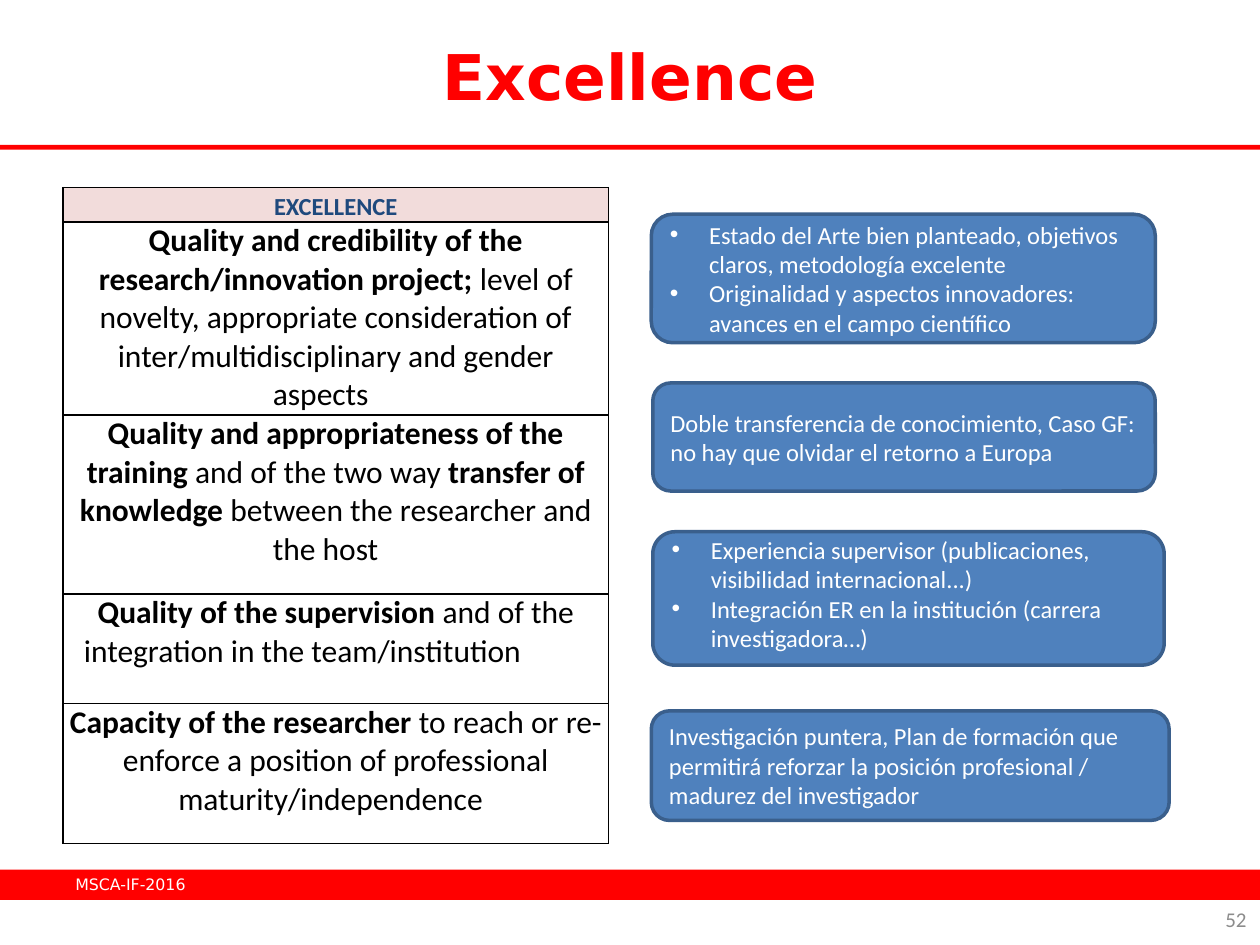
from lxml.etree import SubElement
from pptx import Presentation
from pptx.dml.color import RGBColor
from pptx.enum.shapes import MSO_SHAPE
from pptx.enum.text import MSO_ANCHOR, PP_ALIGN
from pptx.oxml.ns import qn
from pptx.util import Cm, Pt

RED = RGBColor(0xFF, 0x00, 0x00)
WHITE = RGBColor(0xFF, 0xFF, 0xFF)
BLACK = RGBColor(0x00, 0x00, 0x00)
NAVY = RGBColor(0x1F, 0x49, 0x7D)
PINK = RGBColor(0xF2, 0xDC, 0xDB)
BLUE = RGBColor(0x4F, 0x81, 0xBD)
DARK_BLUE = RGBColor(0x3A, 0x5F, 0x8C)
GREY = RGBColor(0x8C, 0x8C, 0x8C)
BODY, HEAD = "Calibri", "DejaVu Sans"

# Content: criteria as (row height, [(text, bold), ...])
TABLE_HEAD = (0.69, "EXCELLENCE")
CRITERIA = [
    (3.89, [("Quality and credibility of the research/innovation project; ", True),
            ("level of novelty, appropriate consideration of "
             "inter/multidisciplinary and gender aspects \t", False)]),
    (3.61, [("Quality and appropriateness of the training ", True),
            ("and of the two way ", False),
            ("transfer of knowledge ", True),
            ("between the researcher and the host \t", False)]),
    (2.21, [("Quality of the supervision ", True),
            ("and of the integration in the team/institution \t", False)]),
    (2.82, [("Capacity of the researcher ", True),
            ("to reach or re-enforce a position of professional "
             "maturity/independence \t", False)]),
]
# Notes: (left, top, width, height), anchor, bulleted, paragraphs
NOTES = [
    ((13.13, 4.32, 10.16, 2.59), MSO_ANCHOR.MIDDLE, True,
     ["Estado del Arte bien planteado, objetivos claros, metodología excelente",
      "Originalidad y aspectos innovadores: avances en el campo científico"]),
    ((13.16, 7.72, 10.13, 2.18), MSO_ANCHOR.MIDDLE, False,
     ["Doble transferencia de conocimiento, Caso GF: "
      "no hay que olvidar el retorno a Europa"]),
    ((13.16, 10.72, 10.31, 2.69), MSO_ANCHOR.BOTTOM, True,
     ["Experiencia supervisor (publicaciones, visibilidad internacional...)",
      "Integración ER en la institución (carrera investigadora…)"]),
    ((13.13, 14.33, 10.44, 2.21), MSO_ANCHOR.MIDDLE, False,
     ["Investigación puntera, Plan de formación que permitirá reforzar "
      "la posición profesional / madurez del investigador"]),
]
BARS = [(0, 17.53, 25.4, 0.61), (0, 2.92, 25.4, 0.1)]
LABELS = [
    ((19.46, 18.01, 5.92, 1.02), "52", dict(size=12, color=GREY, align=PP_ALIGN.RIGHT)),
    ((1.27, 17.32, 5.92, 1.02), "MSCA-IF-2016", dict(size=9, color=WHITE, font=HEAD)),
]


def write(p, text, size=14, color=WHITE, font=BODY, bold=False, align=PP_ALIGN.LEFT):
    p.alignment = align
    r = p.add_run()
    r.text = text
    r.font.name, r.font.size, r.font.bold = font, Pt(size), bold
    r.font.color.rgb = color


def add_bullet(p):
    pPr = p._p.get_or_add_pPr()
    pPr.set("marL", str(Cm(0.79)))
    pPr.set("indent", str(-Cm(0.79)))
    SubElement(pPr, qn("a:buFont"), typeface="Arial")
    SubElement(pPr, qn("a:buChar"), char="•")


def add_box(s, kind, box, fill, line=None):
    sp = s.shapes.add_shape(kind, *map(Cm, box))
    sp.shadow.inherit = False
    sp.fill.solid()
    sp.fill.fore_color.rgb = fill
    if line is None:
        sp.line.fill.background()
    else:
        sp.line.color.rgb, sp.line.width = line, Pt(2)
    return sp


def format_cell(cell, fill=None):
    cell.margin_left = cell.margin_right = Cm(0.13)
    cell.margin_top = cell.margin_bottom = 0
    tcPr = cell._tc.get_or_add_tcPr()
    for side in ("lnL", "lnR", "lnT", "lnB"):
        ln = SubElement(tcPr, qn("a:" + side), w=str(Pt(1)))
        solid = SubElement(ln, qn("a:solidFill"))
        SubElement(solid, qn("a:srgbClr"), val=str(BLACK))
    if fill is None:
        cell.fill.background()
    else:
        cell.fill.solid()
        cell.fill.fore_color.rgb = fill


prs = Presentation()
prs.slide_width, prs.slide_height = Cm(25.4), Cm(19.05)
s = prs.slides.add_slide(prs.slide_layouts[5])

# Red bars
for box in BARS:
    add_box(s, MSO_SHAPE.RECTANGLE, box, RED)

# Title
title = s.shapes.title
title.left, title.top, title.width, title.height = map(Cm, (1.27, 0.33, 22.86, 2.39))
title.text_frame.vertical_anchor = MSO_ANCHOR.MIDDLE
write(title.text_frame.paragraphs[0], "Excellence", size=36, color=RED, font=HEAD,
      bold=True, align=PP_ALIGN.CENTER)

# Criteria table
heights = [TABLE_HEAD[0]] + [h for h, _ in CRITERIA]
table = s.shapes.add_table(len(heights), 1, Cm(1.27), Cm(3.78), Cm(11),
                           Cm(sum(heights))).table
table.first_row = table.horz_banding = False
for row, height in zip(table.rows, heights):
    row.height = Cm(height)
head = table.cell(0, 0)
format_cell(head, PINK)
p = head.text_frame.paragraphs[0]
p.line_spacing = 1.15
write(p, TABLE_HEAD[1], color=NAVY, bold=True, align=PP_ALIGN.CENTER)
for i, (_, runs) in enumerate(CRITERIA, 1):
    cell = table.cell(i, 0)
    format_cell(cell)
    for text, bold in runs:
        write(cell.text_frame.paragraphs[0], text, size=18, color=BLACK, bold=bold,
              align=PP_ALIGN.CENTER)

# Notes beside the table
for box, anchor, bulleted, lines in NOTES:
    tf = add_box(s, MSO_SHAPE.ROUNDED_RECTANGLE, box, BLUE, DARK_BLUE).text_frame
    tf.word_wrap = True
    tf.vertical_anchor = anchor
    for i, line in enumerate(lines):
        p = tf.add_paragraph() if i else tf.paragraphs[0]
        if bulleted:
            add_bullet(p)
        write(p, line)

# Footer and page number
for box, text, fmt in LABELS:
    tf = s.shapes.add_textbox(*map(Cm, box)).text_frame
    tf.word_wrap = True
    tf.vertical_anchor = MSO_ANCHOR.MIDDLE
    write(tf.paragraphs[0], text, **fmt)

prs.save("out.pptx")
